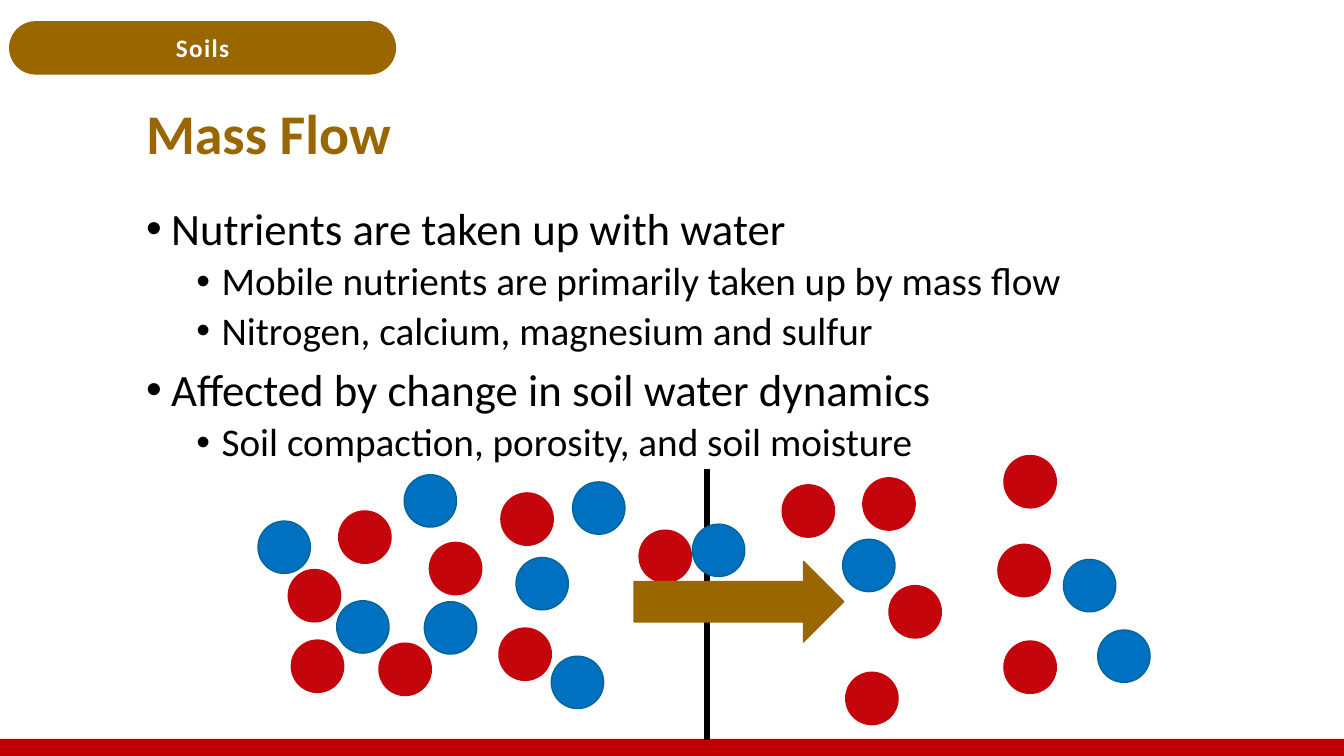
from dataclasses import dataclass

from lxml import etree
from pptx import Presentation
from pptx.dml.color import RGBColor
from pptx.enum.shapes import MSO_SHAPE
from pptx.enum.text import MSO_ANCHOR, PP_ALIGN
from pptx.oxml.ns import qn
from pptx.util import Pt

RECT = MSO_SHAPE.RECTANGLE
PILL = MSO_SHAPE.ROUNDED_RECTANGLE
OVAL = MSO_SHAPE.OVAL
ARROW = MSO_SHAPE.RIGHT_ARROW
MIDDLE = MSO_ANCHOR.MIDDLE
CENTER = PP_ALIGN.CENTER

FONT = "Calibri"
BROWN, RED, BLUE, BLUE_LINE = "996600", "C5050C", "0070C0", "006699"
BLACK, WHITE = "000000", "FFFFFF"
DIAMETER = 37.4


@dataclass
class Level:
    size: float
    indent: float
    before: float


@dataclass
class Particles:
    fill: str
    line: str
    spots: list[tuple[float, float]]


LEVELS = [Level(32, 18, 10), Level(28, 54, 5)]
BULLETS = [
    (0, "Nutrients are taken up with water"),
    (1, "Mobile nutrients are primarily taken up by mass flow"),
    (1, "Nitrogen, calcium, magnesium and sulfur"),
    (0, "Affected by change in soil water dynamics"),
    (1, "Soil compaction, porosity, and soil moisture"),
]
NUTRIENTS = Particles(RED, RED, [
    (712.8, 388.8), (604.1, 480.2), (717.1, 457.9), (241.9, 365), (205.9, 406.8),
    (357.8, 352.1), (306.7, 387.4), (456.5, 378.7), (208.1, 457.2), (558.7, 346.3),
    (356.4, 448.6), (270.7, 459.4), (616.3, 341.3), (717.1, 325.4), (635, 418.3),
])
WATER = Particles(BLUE, BLUE_LINE, [
    (288.7, 339.1), (303.1, 429.8), (494.6, 374.4), (368.6, 398.2), (240.5, 429.1),
    (393.8, 468.7), (184.3, 372.2), (759.6, 399.6), (409, 344.2), (601.9, 385.2),
    (784.1, 450),
])


def color(value: str) -> RGBColor:
    return RGBColor.from_string(value)


def add_shape(s, kind, x: float, y: float, w: float, h: float, fill: str, line: str | None = None):
    sp = s.shapes.add_shape(kind, Pt(x), Pt(y), Pt(w), Pt(h))
    sp.shadow.inherit = False
    sp.fill.solid()
    sp.fill.fore_color.rgb = color(fill)
    if line:
        sp.line.color.rgb = color(line)
        sp.line.width = Pt(1)
    else:
        sp.line.fill.background()
    return sp


def add_box(s, x: float, y: float, w: float, h: float):
    tf = s.shapes.add_textbox(Pt(x), Pt(y), Pt(w), Pt(h)).text_frame
    tf.word_wrap = True
    return tf


def write(p, text: str, size: float, fill: str = BLACK, bold: bool = False,
          align=None, spacing: float | None = None, tracking: float = 0) -> None:
    p.alignment = align
    p.line_spacing = spacing
    r = p.add_run()
    r.text = text
    r.font.name = FONT
    r.font.size = Pt(size)
    r.font.bold = bold
    r.font.color.rgb = color(fill)
    if tracking:
        r.font._element.set("spc", str(round(tracking * 100)))


def add_bullet(p, indent: float, hanging: float = 18) -> None:
    pPr = p._p.get_or_add_pPr()
    pPr.set("marL", str(Pt(indent)))
    pPr.set("indent", str(-Pt(hanging)))
    etree.SubElement(pPr, qn("a:buFont")).set("typeface", "Arial")
    etree.SubElement(pPr, qn("a:buChar")).set("char", "•")


def add_bullets(tf) -> None:
    for i, (depth, text) in enumerate(BULLETS):
        p = tf.add_paragraph() if i else tf.paragraphs[0]
        level = LEVELS[depth]
        p.level = depth
        add_bullet(p, level.indent)
        p.space_before = Pt(level.before if i else 0)
        write(p, text, level.size, spacing=0.9)


def add_particles(s, particles: Particles) -> None:
    for x, y in particles.spots:
        add_shape(s, OVAL, x, y, DIAMETER, DIAMETER, particles.fill, particles.line)


def main() -> None:
    prs = Presentation()
    prs.slide_width, prs.slide_height = Pt(960), Pt(540)
    s = prs.slides.add_slide(prs.slide_layouts[6])

    add_shape(s, RECT, 0, 527.8, 960, 12.2, "C00000")
    sp = add_shape(s, PILL, 6.5, 15.1, 276.5, 38.2, BROWN)
    sp.adjustments[0] = 0.5
    sp.text_frame.vertical_anchor = MIDDLE
    write(sp.text_frame.paragraphs[0], "Soils", 18, WHITE, bold=True, align=CENTER, tracking=1)

    tf = add_box(s, 97.2, 61.2, 784.1, 72)
    tf.vertical_anchor = MIDDLE
    write(tf.paragraphs[0], "Mass Flow", 40, BROWN, bold=True, spacing=0.9)
    add_bullets(add_box(s, 97.2, 144, 784.1, 342.7))

    add_particles(s, NUTRIENTS)
    add_shape(s, RECT, 503.3, 335.5, 3.6, 192.3, BLACK, BLACK)
    add_shape(s, ARROW, 452.9, 401, 149.8, 57.6, BROWN, BROWN)
    add_particles(s, WATER)
    prs.save("out.pptx")


if __name__ == "__main__":
    main()
